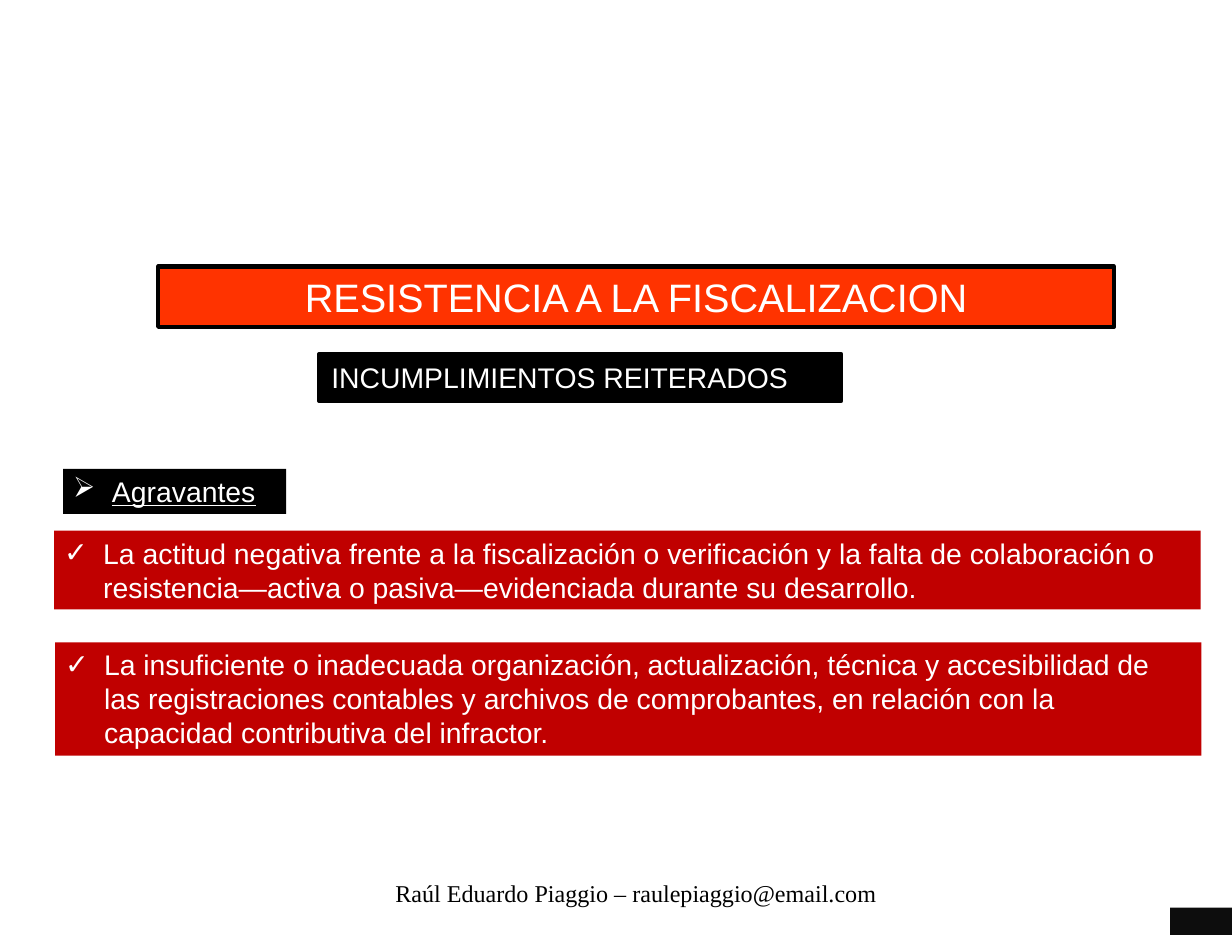
from dataclasses import dataclass

from lxml import etree
from pptx import Presentation
from pptx.dml.color import RGBColor
from pptx.enum.shapes import MSO_SHAPE
from pptx.enum.text import MSO_ANCHOR, MSO_AUTO_SIZE, PP_ALIGN
from pptx.oxml.ns import qn
from pptx.util import Cm, Pt

RECT = MSO_SHAPE.RECTANGLE
BUTTON = MSO_SHAPE.ACTION_BUTTON_CUSTOM
TOP, MIDDLE = MSO_ANCHOR.TOP, MSO_ANCHOR.MIDDLE
LEFT, CENTER = PP_ALIGN.LEFT, PP_ALIGN.CENTER
FIXED = MSO_AUTO_SIZE.NONE


@dataclass(frozen=True)
class Theme:
    """Colours, fonts and sizes of the slide."""
    black: str = "000000"
    white: str = "FFFFFF"
    orange: str = "FF3300"
    red: str = "C00000"
    sans: str = "Arial"
    serif: str = "Times New Roman"
    head: int = 28
    body: int = 20
    foot: int = 17
    edge: int = 3
    indent: float = 0.97
    pad: tuple = (0.3, 0.15)
    tight: tuple = (0.25, 0.13)


class Deck:
    """Holds the theme and the slide being built."""

    def __init__(self, theme, width, height):
        """Start a deck with one slide."""
        self.theme = theme
        self.file = Presentation()
        self.file.slide_width, self.file.slide_height = Cm(width), Cm(height)
        self.slide = self.file.slides.add_slide(self.file.slide_layouts[3])
        self.shapes = self.slide.shapes

    def place(self, shape, box):
        """Move a shape to a box given in centimetres."""
        shape.left, shape.top, shape.width, shape.height = map(Cm, box)

    def paint(self, shape, fill, edge=False):
        """Fill a shape and give it an edge or none."""
        shape.shadow.inherit = False
        shape.fill.solid()
        shape.fill.fore_color.rgb = RGBColor.from_string(fill)
        if edge:
            shape.line.color.rgb = RGBColor.from_string(self.theme.black)
            shape.line.width = Pt(self.theme.edge)
        else:
            shape.line.fill.background()

    def letter(self, shape, text, size, color, face, pad, align=LEFT,
               anchor=TOP, mark=None, under=False):
        """Set one paragraph of text in a shape."""
        frame = shape.text_frame
        frame.word_wrap = True
        frame.auto_size = FIXED
        frame.vertical_anchor = anchor
        frame.margin_left = frame.margin_right = Cm(pad[0])
        frame.margin_top = frame.margin_bottom = Cm(pad[1])
        para = frame.paragraphs[0]
        para.text = text
        para.alignment = align
        para.space_before = Pt(0)
        if mark:
            self.bullet(para, mark)
        font = para.font
        font.name, font.size = face, Pt(size)
        font.color.rgb = RGBColor.from_string(color)
        if under:
            font.underline = True

    def bullet(self, para, mark):
        """Give a paragraph a hanging bullet."""
        props = para._p.get_or_add_pPr()
        step = Cm(self.theme.indent)
        props.set("marL", str(step))
        props.set("indent", str(-step))
        etree.SubElement(props, qn("a:buChar")).set("char", mark)

    def title(self, text, box):
        """Set the framed slide title."""
        look, shape = self.theme, self.shapes.title
        self.place(shape, box)
        self.paint(shape, look.orange, True)
        self.letter(shape, text, look.head, look.white, look.sans, look.pad,
                    CENTER, MIDDLE)

    def item(self, slot, text, box):
        """Set a checked point in a body placeholder."""
        look, shape = self.theme, self.slide.placeholders[slot]
        self.place(shape, box)
        self.paint(shape, look.red)
        self.letter(shape, text, look.body, look.white, look.sans, look.tight,
                    mark="✓")

    def label(self, text, box, pad, **style):
        """Add a black label with white text."""
        look = self.theme
        shape = self.shapes.add_shape(RECT, *map(Cm, box))
        self.paint(shape, look.black, "mark" not in style)
        self.letter(shape, text, look.body, look.white, look.sans, pad,
                    **style)

    def footer(self, text, box):
        """Add the centred author line."""
        look = self.theme
        shape = self.shapes.add_textbox(*map(Cm, box))
        self.letter(shape, text, look.foot, look.black, look.serif, look.pad,
                    CENTER)

    def button(self, box, alpha):
        """Add the slightly clear corner button."""
        shape = self.shapes.add_shape(BUTTON, *map(Cm, box))
        self.paint(shape, self.theme.black)
        color = shape._element.spPr.find(qn("a:solidFill"))[0]
        etree.SubElement(color, qn("a:alpha")).set("val", str(alpha * 1000))


def main():
    """Build and save the slide."""
    theme = Theme()
    deck = Deck(theme, 30.68, 23.29)
    deck.footer("Raúl Eduardo Piaggio – raulepiaggio@email.com",
                (7.14, 21.74, 17.4, 1.55))
    deck.button((29.14, 22.61, 1.54, 0.68), 95)
    deck.title("RESISTENCIA A LA FISCALIZACION", (3.94, 6.64, 23.8, 1.5))
    deck.label("INCUMPLIMIENTOS REITERADOS", (7.95, 8.82, 13, 1.17),
               theme.pad, anchor=MIDDLE)
    deck.label("Agravantes", (1.57, 11.68, 5.56, 1.12), theme.tight,
               mark="➢", under=True)
    deck.item(1, "La actitud negativa frente a la fiscalización o verificación "
              "y la falta de colaboración o resistencia—activa o "
              "pasiva—evidenciada durante su desarrollo.",
              (1.35, 13.22, 28.55, 1.96))
    deck.item(2, "La insuficiente o inadecuada organización, actualización, "
              "técnica y accesibilidad de las registraciones contables y "
              "archivos de comprobantes, en relación con la capacidad "
              "contributiva del infractor.", (1.37, 16, 28.55, 2.82))
    deck.file.save("out.pptx")


if __name__ == "__main__":
    main()
